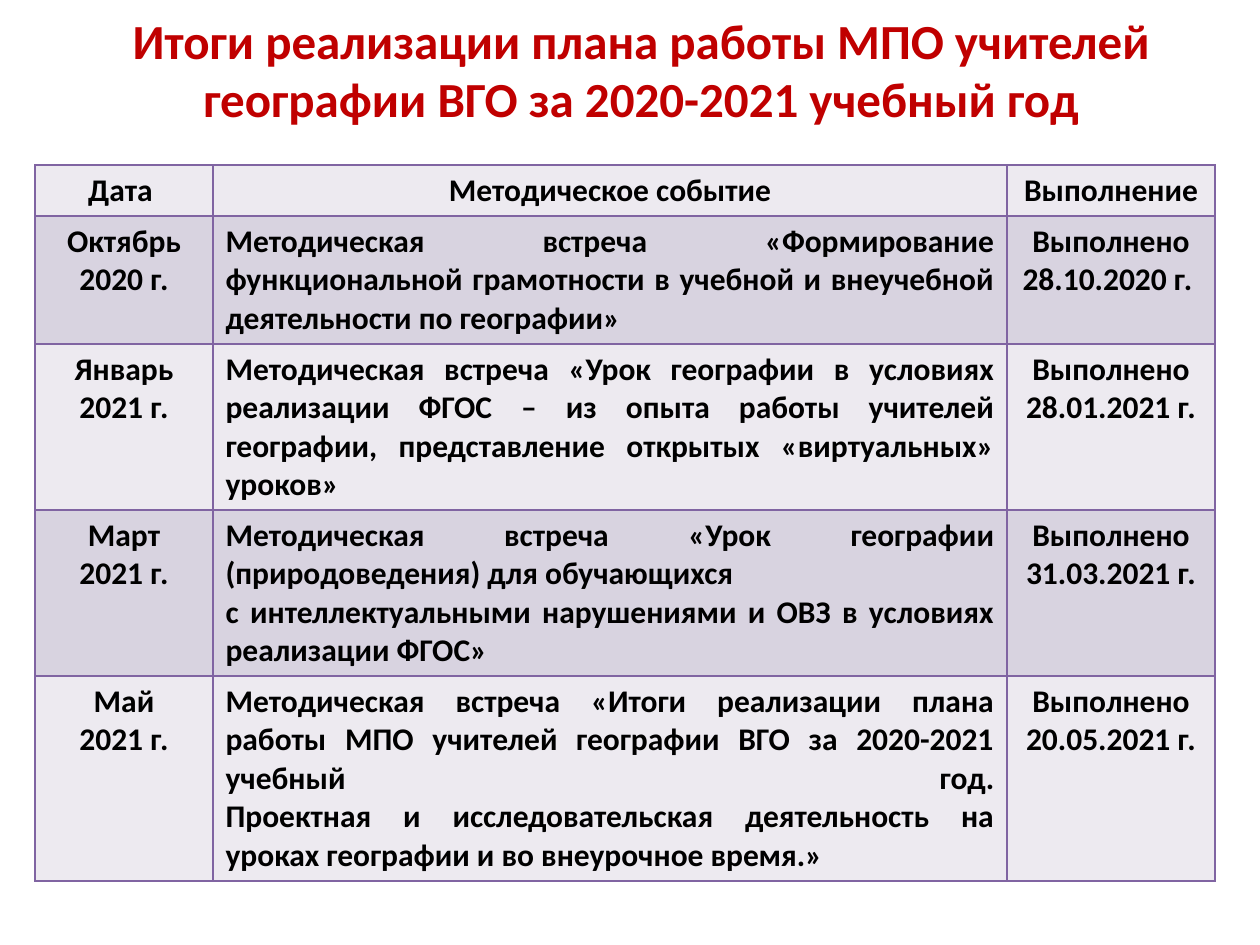
from lxml import etree
from pptx import Presentation
from pptx.dml.color import RGBColor
from pptx.enum.text import MSO_ANCHOR, PP_ALIGN
from pptx.oxml import parse_xml
from pptx.util import Emu, Pt

SCALE = 914400 / 126
RED = RGBColor(0xC0, 0x00, 0x00)
BLACK = RGBColor(0x00, 0x00, 0x00)
LIGHT = RGBColor(0xED, 0xEA, 0xF0)
DARK = RGBColor(0xD8, 0xD3, 0xE0)
PURPLE = RGBColor(0x80, 0x64, 0xA2)
CENTER, JUSTIFY = PP_ALIGN.CENTER, PP_ALIGN.JUSTIFY
MIDDLE = MSO_ANCHOR.MIDDLE
FONT = "Calibri"
DRAWING = "http://schemas.openxmlformats.org/drawingml/2006/main"


def px(length):
    return Emu(round(length * SCALE))


def write(frame, paragraphs, size, color, align):
    """Fill a text frame; a newline inside a paragraph is a line break."""
    for number, text in enumerate(paragraphs):
        para = frame.paragraphs[0] if number == 0 else frame.add_paragraph()
        para.alignment = align
        for part, line in enumerate(text.split("\n")):
            if part:
                para.add_line_break()
            span = para.add_run()
            span.text = line
            span.font.name = FONT
            span.font.size = Pt(size)
            span.font.bold = True
            span.font.color.rgb = color


deck = Presentation()
deck.slide_width, deck.slide_height = px(1260), px(945)
page = deck.slides.add_slide(deck.slide_layouts[6])

# Title
title = page.shapes.add_textbox(px(74), px(55), px(1134), px(28))
title.text_frame.word_wrap = True
title.text_frame.vertical_anchor = MIDDLE
write(title.text_frame,
      ["Итоги реализации плана работы МПО учителей географии ВГО за 2020-2021 учебный год"],
      28, RED, CENTER)

# Table contents: each cell is a list of paragraphs
ROWS = [
    (["Дата "], ["Методическое событие"], ["Выполнение"]),
    (["Октябрь 2020 г."],
     ["Методическая встреча «Формирование функциональной грамотности в учебной "
      "и внеучебной деятельности по географии»"],
     ["Выполнено", "28.10.2020 г. "]),
    (["Январь 2021 г."],
     ["Методическая встреча «Урок географии в условиях реализации ФГОС – из опыта работы "
      "учителей географии, представление открытых «виртуальных» уроков»"],
     ["Выполнено 28.01.2021 г."]),
    (["Март", "2021 г."],
     ["Методическая встреча «Урок географии (природоведения) для обучающихся",
      "с интеллектуальными нарушениями и ОВЗ в условиях реализации ФГОС»"],
     ["Выполнено 31.03.2021 г."]),
    (["Май", "2021 г."],
     ["Методическая встреча «Итоги реализации плана работы МПО учителей географии ВГО "
      "за 2020-2021 учебный год.\nПроектная и исследовательская деятельность "
      "на уроках географии и во внеурочное время.»"],
     ["Выполнено 20.05.2021 г."]),
]
WIDTHS = [178, 794, 208]
HEIGHTS = [51, 128, 166, 166, 205]

# Table grid
table = page.shapes.add_table(len(ROWS), len(WIDTHS), px(35), px(165),
                              px(sum(WIDTHS)), px(sum(HEIGHTS))).table
table.first_row = False
table.horz_banding = False
for column, width in zip(table.columns, WIDTHS):
    column.width = px(width)
for row, height in zip(table.rows, HEIGHTS):
    row.height = px(height)

# Cells with banded fills and purple borders
for row_number, row in enumerate(ROWS):
    for column_number, paragraphs in enumerate(row):
        cell = table.cell(row_number, column_number)
        cell.fill.solid()
        cell.fill.fore_color.rgb = DARK if row_number % 2 else LIGHT
        is_event = row_number > 0 and column_number == 1
        write(cell.text_frame, paragraphs, 18, BLACK, JUSTIFY if is_event else CENTER)
        properties = cell._tc.get_or_add_tcPr()
        for position, side in enumerate(("lnL", "lnR", "lnT", "lnB")):
            border = parse_xml(f'<a:{side} xmlns:a="{DRAWING}" w="{Pt(1)}"/>')
            fill = etree.SubElement(border, f"{{{DRAWING}}}solidFill")
            etree.SubElement(fill, f"{{{DRAWING}}}srgbClr", val=str(PURPLE))
            properties.insert(position, border)

deck.save("out.pptx")
